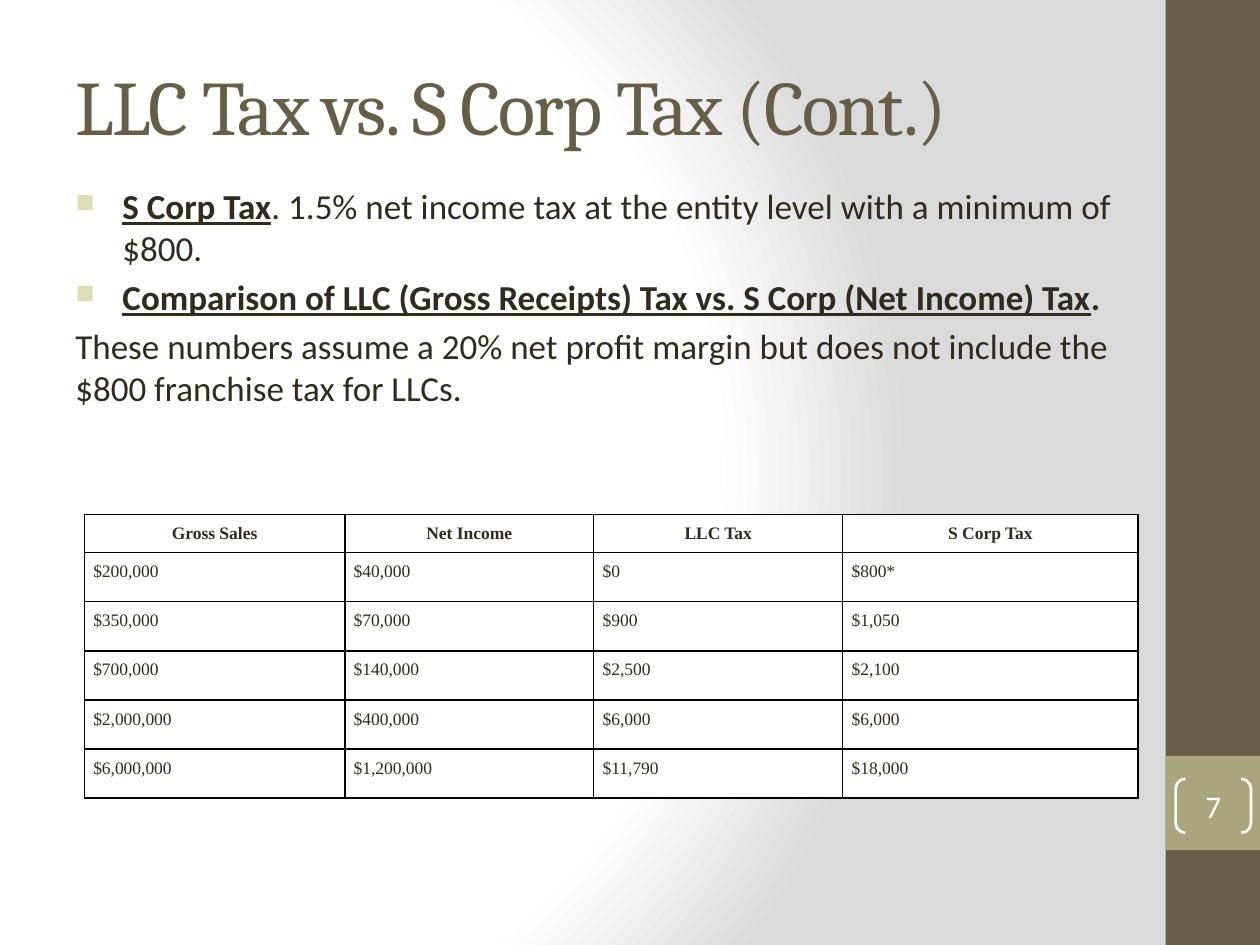
from lxml import etree
from pptx import Presentation
from pptx.dml.color import RGBColor
from pptx.enum.shapes import MSO_SHAPE
from pptx.enum.text import MSO_ANCHOR, PP_ALIGN
from pptx.oxml import parse_xml
from pptx.oxml.ns import qn
from pptx.util import Cm, Pt

RECT, PAIR = MSO_SHAPE.RECTANGLE, MSO_SHAPE.DOUBLE_BRACKET
CENTER, LEFT = PP_ALIGN.CENTER, PP_ALIGN.LEFT
MIDDLE = MSO_ANCHOR.MIDDLE
BROWN = RGBColor(0x67, 0x5E, 0x47)
OLIVE = RGBColor(0xA9, 0xA5, 0x7C)
SAND = RGBColor(0xDF, 0xDC, 0xB7)
DARK = RGBColor(0x2F, 0x2B, 0x20)
WHITE = RGBColor(0xFF, 0xFF, 0xFF)
BLACK = RGBColor(0, 0, 0)


def style(run, size, name, color, bold=False, under=False):
    font = run.font
    font.size, font.name = Pt(size), name
    font.bold, font.underline = bold, under
    font.color.rgb = color


def add(parent, tag, **attrs):
    node = etree.SubElement(parent, qn(tag))
    for key, value in attrs.items():
        node.set(key, str(value))
    return node


deck = Presentation()
deck.slide_width, deck.slide_height = Cm(25.4), Cm(19.05)
slide = deck.slides.add_slide(deck.slide_layouts[5])
shapes = slide.shapes

# Background: radial gradient
fill = slide.background.fill
fill.gradient()
grad = fill._fill._gradFill
for child in list(grad):
    grad.remove(child)
stops = add(grad, "a:gsLst")
for pos, color in [(0, WHITE), (75, WHITE), (100, RGBColor(0xDA, 0xDA, 0xDA))]:
    add(add(stops, "a:gs", pos=pos * 1000), "a:srgbClr", val=color)
ring = add(grad, "a:path", path="circle")
add(ring, "a:fillToRect", l=20000, t=50000, r=100000, b=50000)

# Side band and number tile
for top, height, color in [(0, 19.05, BROWN), (15.24, 1.9, OLIVE)]:
    band = shapes.add_shape(RECT, Cm(23.5), Cm(top), Cm(1.9), Cm(height))
    band.shadow.inherit = False
    band.fill.solid()
    band.fill.fore_color.rgb = color
    band.line.fill.background()

# Title
title = shapes.title
title.left, title.top, title.width, title.height = Cm(1.27), Cm(1.07), Cm(22.86), Cm(2.1)
frame = title.text_frame
frame.text = "LLC Tax vs. S Corp Tax (Cont.)"
frame.vertical_anchor = MIDDLE
frame.paragraphs[0].alignment = LEFT
run = frame.paragraphs[0].runs[0]
style(run, 44, "Cambria", BROWN)
run.font._element.set("spc", "-100")

# Body: bold underlined lead, then the rest
points = [
    ("S Corp Tax", ". 1.5% net income tax at the entity level with a minimum of $800.", False),
    ("Comparison of LLC (Gross Receipts) Tax vs. S Corp (Net Income) Tax", ".", True),
    ("", "These numbers assume a 20% net profit margin but does not include the "
         "$800 franchise tax for LLCs.", False),
]
frame = shapes.add_textbox(Cm(1.27), Cm(3.6), Cm(22.86), Cm(14.8)).text_frame
frame.word_wrap = True
for i, (lead, rest, bold) in enumerate(points):
    para = frame.add_paragraph() if i else frame.paragraphs[0]
    para.space_before = Pt(4)
    if lead:
        run = para.add_run()
        run.text = lead
        style(run, 20, "Calibri", DARK, True, True)
        props = para._p.get_or_add_pPr()
        props.set("marL", str(Cm(0.95)))
        props.set("indent", str(-Cm(0.95)))
        add(add(props, "a:buClr"), "a:srgbClr", val=SAND)
        add(props, "a:buSzPct", val=75000)
        add(props, "a:buChar", char="■")
    run = para.add_run()
    run.text = rest
    style(run, 20, "Calibri", DARK, bold)

# Slide number in brackets
pair = shapes.add_shape(PAIR, Cm(23.7), Cm(15.7), Cm(1.52), Cm(1.09))
pair.shadow.inherit = False
pair.adjustments[0] = 0.18
pair.fill.background()
pair.line.color.rgb = WHITE
pair.line.width = Pt(1.5)
frame = pair.text_frame
frame.margin_left = frame.margin_right = frame.margin_top = frame.margin_bottom = 0
frame.vertical_anchor = MIDDLE
frame.text = "7"
frame.paragraphs[0].alignment = CENTER
style(frame.paragraphs[0].runs[0], 18, "Calibri", WHITE)

# Tax table
rows = [
    ("Gross Sales", "Net Income", "LLC Tax", "S Corp Tax"),
    ("$200,000", "$40,000", "$0", "$800*"),
    ("$350,000", "$70,000", "$900", "$1,050"),
    ("$700,000", "$140,000", "$2,500", "$2,100"),
    ("$2,000,000", "$400,000", "$6,000", "$6,000"),
    ("$6,000,000", "$1,200,000", "$11,790", "$18,000"),
]
table = shapes.add_table(6, 4, Cm(1.7), Cm(10.37), Cm(21.24), Cm(5.72)).table
for col, width in zip(table.columns, (5.25, 5.02, 5.02, 5.95)):
    col.width = Cm(width)
for r, row in enumerate(rows):
    head = r == 0
    table.rows[r].height = Cm(0.77 if head else 0.99)
    for c, text in enumerate(row):
        cell = table.cell(r, c)
        cell.margin_left = cell.margin_right = Cm(0.18)
        cell.margin_top = cell.margin_bottom = 0
        for side in "LRTB":
            edge = add(cell._tc.get_or_add_tcPr(), "a:ln" + side, w=Pt(1))
            add(add(edge, "a:solidFill"), "a:srgbClr", val=BLACK)
        cell.fill.solid()
        cell.fill.fore_color.rgb = WHITE
        cell.text = text
        para = cell.text_frame.paragraphs[0]
        para.alignment = CENTER if head else LEFT
        para.line_spacing = 1.5
        para.space_before = para.space_after = Pt(0.3 if head else 0.2)
        style(para.runs[0], 10, "Times New Roman", DARK, head)

deck.save("out.pptx")
